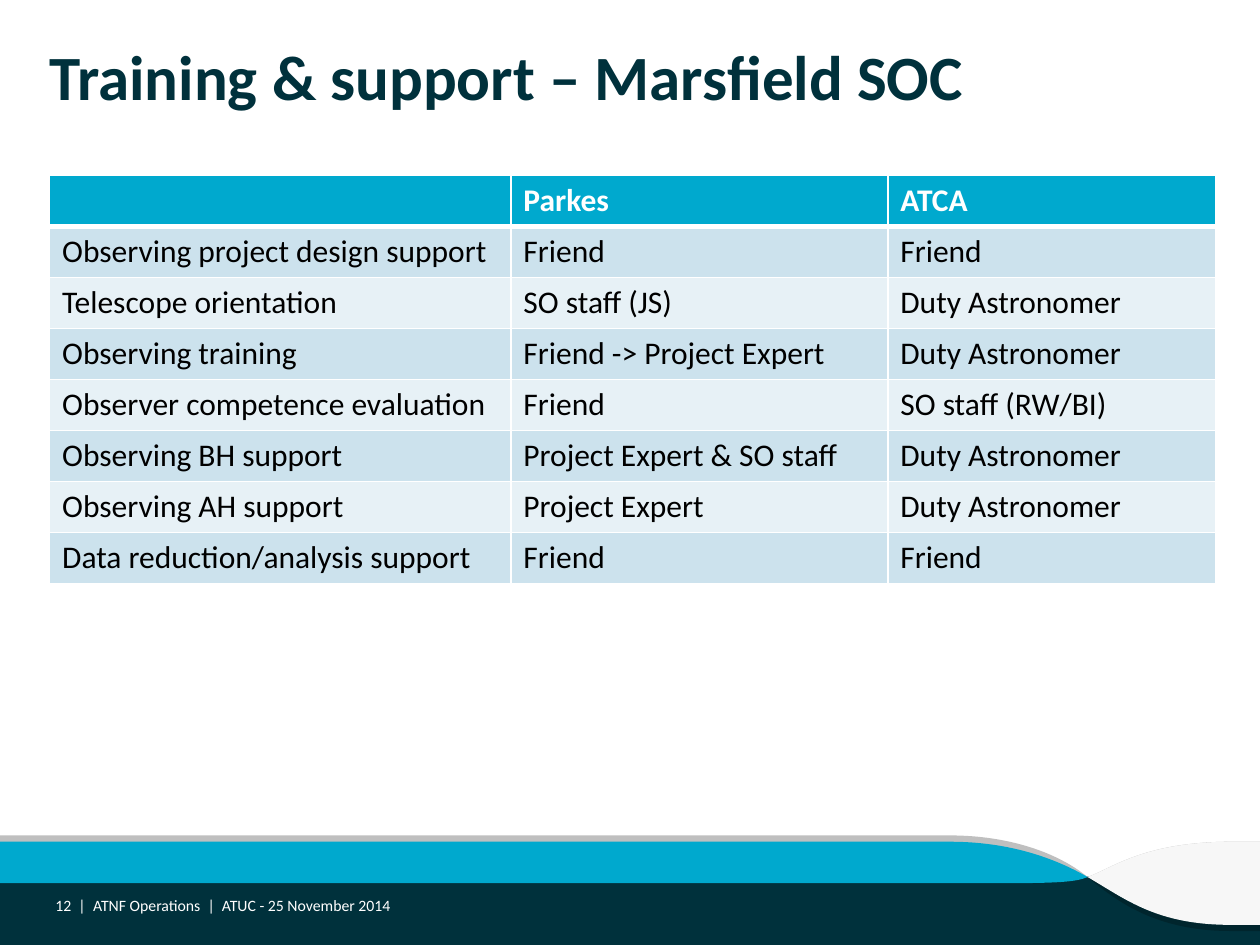
from lxml.etree import SubElement
from pptx import Presentation
from pptx.dml.color import RGBColor
from pptx.enum.shapes import MSO_SHAPE as Shape
from pptx.enum.text import MSO_ANCHOR as Anchor, PP_ALIGN as Align
from pptx.oxml.ns import qn
from pptx.util import Pt

NAVY = RGBColor(0x00, 0x31, 0x3C)
DEEP_NAVY = RGBColor(0x00, 0x25, 0x2D)
CYAN = RGBColor(0x00, 0xA9, 0xCE)
GREY = RGBColor(0xBF, 0xBF, 0xBF)
PALE_GREY = RGBColor(0xF7, 0xF7, 0xF7)
BAND_DARK = RGBColor(0xCC, 0xE2, 0xED)
BAND_LIGHT = RGBColor(0xE7, 0xF1, 0xF6)
WHITE = RGBColor(0xFF, 0xFF, 0xFF)
BLACK = RGBColor(0, 0, 0)
FONT = "Calibri"


def add_text(text, left, top, width, height, size, color, bold=False,
             align=Align.LEFT, anchor=Anchor.MIDDLE):
    frame = slide.shapes.add_textbox(Pt(left), Pt(top), Pt(width), Pt(height)).text_frame
    frame.word_wrap = True
    frame.vertical_anchor = anchor
    frame.margin_left = frame.margin_right = frame.margin_top = frame.margin_bottom = 0
    line = frame.paragraphs[0]
    line.text = text
    line.alignment = align
    line.font.name, line.font.size, line.font.bold = FONT, Pt(size), bold
    line.font.color.rgb = color


def add_ribbon(color, outlines):
    """Outlines are lists of steps: one point is a straight line, three a curve."""
    builder = None
    for start, *steps in outlines:
        corner = [Pt(value) for value in start[0]]
        if builder is None:
            builder = slide.shapes.build_freeform(*corner)
        else:
            builder.move_to(*corner)
        builder.add_line_segments([(Pt(x), Pt(y)) for step in steps for x, y in step])
    ribbon = builder.convert_to_shape()
    ribbon.shadow.inherit = False
    ribbon.fill.solid()
    ribbon.fill.fore_color.rgb = color
    ribbon.line.fill.background()
    # Merge the three points of each curve into one Bezier segment
    segments = iter(list(ribbon._element.iter(qn("a:lnTo"))))
    for outline in outlines:
        for step in outline[1:]:
            first, *others = [next(segments) for _ in step]
            if others:
                first.tag = qn("a:cubicBezTo")
                for other in others:
                    first.append(other[0])
                    other.getparent().remove(other)


prs = Presentation()
prs.slide_width, prs.slide_height = Pt(720), Pt(540)
slide = prs.slides.add_slide(prs.slide_layouts[6])

# Footer band
band = slide.shapes.add_shape(Shape.RECTANGLE, 0, Pt(501), Pt(720), Pt(39))
band.shadow.inherit = False
band.fill.solid()
band.fill.fore_color.rgb = NAVY
band.line.fill.background()

# Footer ribbons, which all meet at the knot
knot = (621.5, 501.2)
swirl_top = [(653.8, 481), (635.8, 496), knot]
cyan_tail = [(604.8, 504.7), (614.9, 504), knot]
add_ribbon(GREY, [
    [[(720, 481)], [(704.2, 481)], swirl_top, [(720, 501.2)], [(720, 532)]],
    [[(542.9, 477.4)], [(0, 477.4)], [(0, 501.2)], [knot],
     [(604.8, 487.4), (576.7, 477.4), (542.9, 477.4)]],
])
add_ribbon(DEEP_NAVY, [
    [[knot], [(0, 501.2)], [(0, 504.7)], [(572.4, 504.7)], cyan_tail],
    [[(720, 501.2)], [knot], [(638.6, 515.5), (661, 532), (703.4, 532)], [(720, 532)]],
])
add_ribbon(CYAN, [
    [[knot], [(602.6, 490.3), (576.7, 481), (542.9, 481)], [(0, 481)],
     [(0, 504.7)], [(572.4, 504.7)], cyan_tail],
])
add_ribbon(PALE_GREY, [
    [[(704.2, 481)], swirl_top, [(643.7, 514.1), (661, 528.5), (703.4, 528.5)],
     [(720, 528.5)], [(720, 481)]],
])

# Title
add_text("Training & support – Marsfield SOC", 28.3, 21.6, 666, 67, 36, NAVY,
         bold=True, anchor=Anchor.TOP)

# Support roles table
roles = [
    ("", "Parkes", "ATCA"),
    ("Observing project design support", "Friend", "Friend"),
    ("Telescope orientation", "SO staff (JS)", "Duty Astronomer"),
    ("Observing training", "Friend -> Project Expert", "Duty Astronomer"),
    ("Observer competence evaluation", "Friend", "SO staff (RW/BI)"),
    ("Observing BH support", "Project Expert & SO staff", "Duty Astronomer"),
    ("Observing AH support", "Project Expert", "Duty Astronomer"),
    ("Data reduction/analysis support", "Friend", "Friend"),
]
table = slide.shapes.add_table(len(roles), 3, Pt(28.35), Pt(100.2),
                               Pt(666.3), Pt(233.28)).table
for column, width in zip(table.columns, (263.6, 215.4, 187.3)):
    column.width = Pt(width)
for row, texts in enumerate(roles):
    table.rows[row].height = Pt(29.16)
    header = row == 0
    for col, text in enumerate(texts):
        cell = table.cell(row, col)
        entry = cell.text_frame.paragraphs[0]
        entry.text = text
        entry.font.name, entry.font.size, entry.font.bold = FONT, Pt(18), header
        entry.font.color.rgb = WHITE if header else BLACK
        # White rules, thicker under the header
        for side in ("lnL", "lnR", "lnT", "lnB"):
            thick = (row, side) in ((0, "lnB"), (1, "lnT"))
            rule = SubElement(cell._tc.get_or_add_tcPr(), qn(f"a:{side}"),
                              w=str(Pt(3 if thick else 1)))
            SubElement(SubElement(rule, qn("a:solidFill")), qn("a:srgbClr"),
                       val=str(WHITE))
        cell.fill.solid()
        cell.fill.fore_color.rgb = CYAN if header else BAND_DARK if row % 2 else BAND_LIGHT

# Footer text
add_text("ATNF Operations  |  ATUC - 25 November 2014", 53.3, 512, 479, 10, 9, WHITE)
add_text("12  |", 26, 512, 23, 10, 9, WHITE, align=Align.RIGHT)

prs.save("out.pptx")
